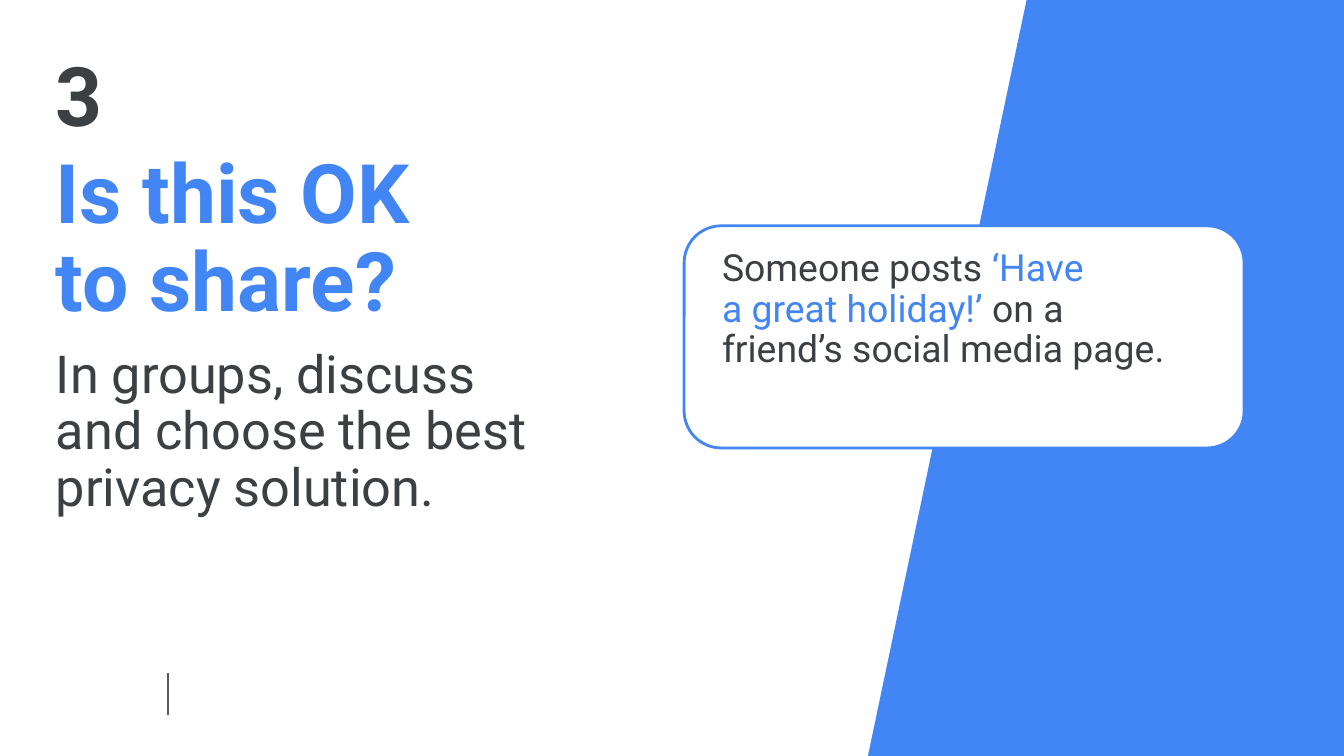
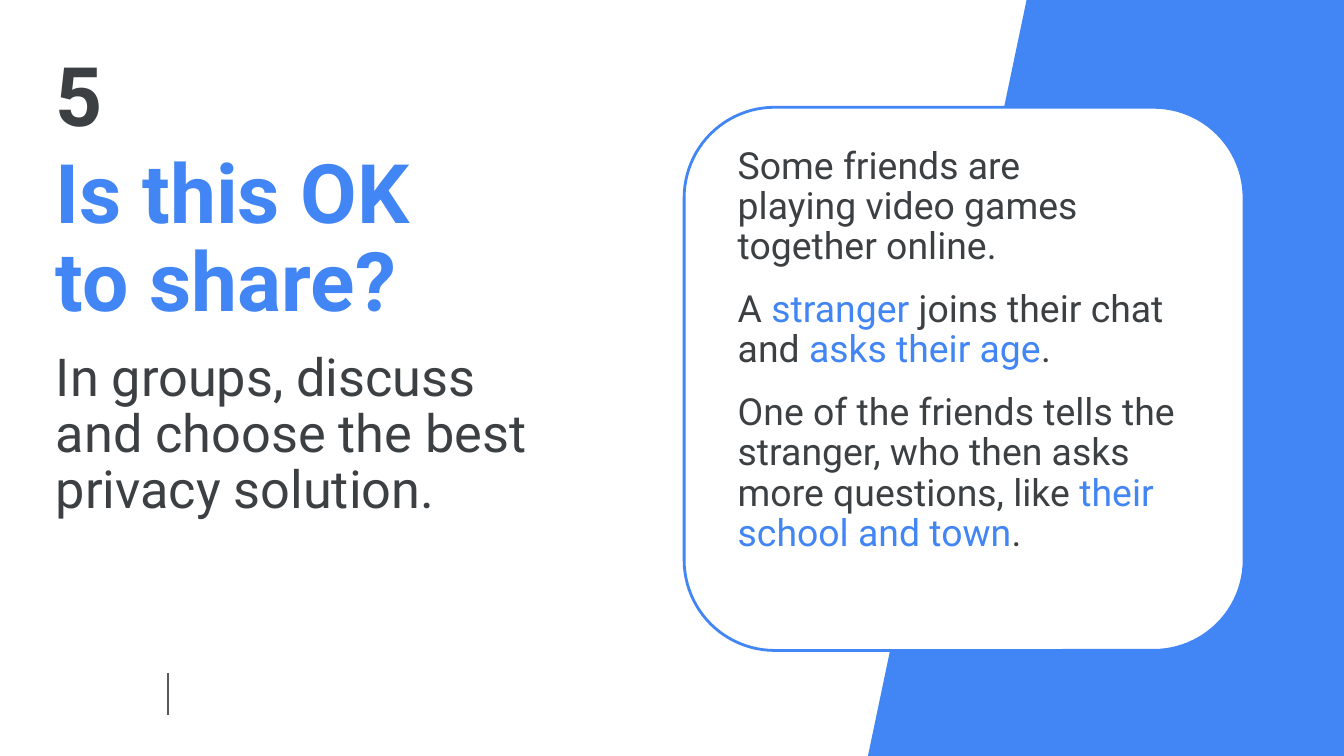
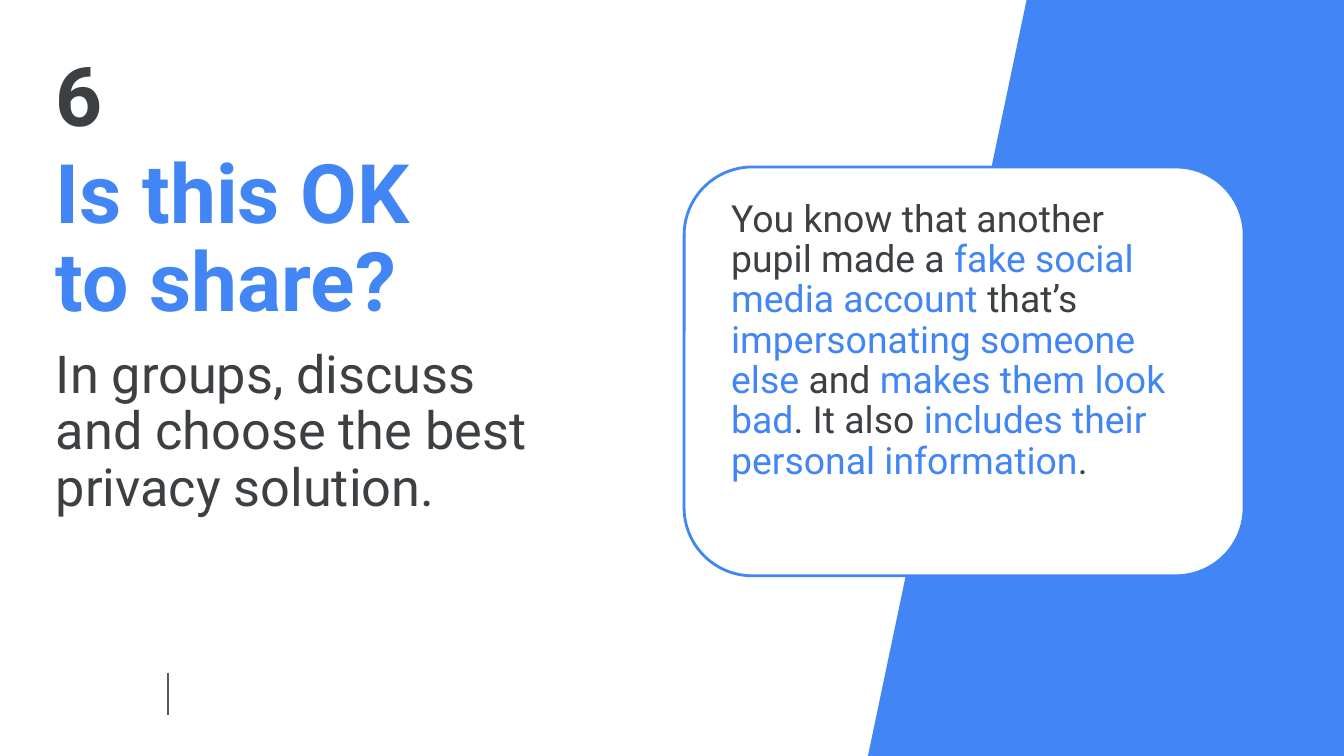
from typing import NamedTuple

from lxml import etree
from pptx import Presentation
from pptx.dml.color import RGBColor
from pptx.enum.shapes import MSO_CONNECTOR as CONNECTOR, MSO_SHAPE as SHAPE
from pptx.enum.text import MSO_ANCHOR as ANCHOR, MSO_AUTO_SIZE as AUTO_SIZE, PP_ALIGN as ALIGN
from pptx.oxml.ns import qn
from pptx.util import Pt

PX = 6350  # 144 px to the inch
SLIDE_W, SLIDE_H = 1440, 810

BLUE = RGBColor(0x42, 0x85, 0xF4)
INK = RGBColor(0x3C, 0x40, 0x43)
GREY = RGBColor(0x59, 0x59, 0x59)
WHITE = RGBColor(0xFF, 0xFF, 0xFF)

FONT = "Roboto"
HEADING = {"name": FONT, "size": Pt(44), "bold": True}
PROMPT = {"name": FONT, "size": Pt(28), "bold": False}
SCENARIO = {"name": FONT, "size": Pt(20), "bold": False}

NO_INSETS = (0, 0, 0, 0)
CARD_INSETS = (29, 14, 43, 14)


class Box(NamedTuple):
    left: int
    top: int
    width: int
    height: int

    def emu(self):
        return [length * PX for length in self]


NUMBER_BOX = Box(60, 59, 870, 108)
TITLE_BOX = Box(60, 163, 660, 192)
BAND_BOX = Box(930, 0, SLIDE_W - 930, SLIDE_H)
FOOTER_BOX = Box(180, 721, 0, 45)

TITLE = "Is this OK \nto share?"
INSTRUCTION = "In groups, discuss \nand choose the best privacy solution."

# number, prompt top, card top, card height, scenario (*...* marks blue words)
QUESTIONS = [
    ("3", 373, 242, 238, [
        "Someone posts *‘Have \na great holiday!’* on a \nfriend’s social media page.",
    ]),
    ("5", 376, 115, 582, [
        "Some friends are \nplaying video games together online.",
        "A *stranger* joins their chat and *asks their age*.",
        "One of the friends tells the stranger, who then asks more questions, "
        "like *their school and town*.",
    ]),
    ("6", 373, 179, 438, [
        "You know that another pupil made a *fake social media account* that’s "
        "*impersonating someone else* and *makes them look bad*. "
        "It also *includes their personal information*.",
    ]),
]


def set_all(target, values):
    for name, value in values.items():
        setattr(target, name, value)


def write_paragraph(paragraph, text, font, color):
    """Write text, with *...* in blue and each newline as a line break."""
    for part, phrase in enumerate(text.split("*")):
        for row, words in enumerate(phrase.split("\n")):
            if row:
                paragraph.add_line_break()
            if words:
                run = paragraph.add_run()
                run.text = words
                set_all(run.font, font)
                run.font.color.rgb = BLUE if part % 2 else color


def fill_text(frame, texts, font, color=INK, insets=NO_INSETS, auto_size=AUTO_SIZE.NONE):
    sides = ("margin_left", "margin_top", "margin_right", "margin_bottom")
    set_all(frame, {side: inset * PX for side, inset in zip(sides, insets)})
    set_all(frame, {"word_wrap": True, "auto_size": auto_size,
                    "vertical_anchor": ANCHOR.TOP})
    for index, text in enumerate(texts):
        paragraph = frame.add_paragraph() if index else frame.paragraphs[0]
        set_all(paragraph, {"alignment": ALIGN.LEFT, "line_spacing": 0.9})
        if index:
            paragraph.space_before = Pt(12)
        write_paragraph(paragraph, text, font, color)


def add_label(slide, box, text, font, **options):
    label = slide.shapes.add_textbox(*box.emu())
    fill_text(label.text_frame, [text], font, **options)


def add_footer_rule(slide, box):
    left, top, width, height = box.emu()
    rule = slide.shapes.add_connector(CONNECTOR.STRAIGHT, left, top, left + width, top + height)
    rule.line.color.rgb = GREY
    rule.line.width = Pt(0.75)
    etree.SubElement(rule._element.spPr, qn("a:effectLst"))


def add_slanted_band(slide, box, slant=170):
    right, bottom = box.left + box.width, box.top + box.height
    outline = slide.shapes.build_freeform(right, bottom, scale=PX)
    outline.add_line_segments([(box.left, bottom), (box.left + slant, box.top),
                               (right, box.top)], close=True)
    band = outline.convert_to_shape()
    band.shadow.inherit = False
    band.fill.solid()
    band.fill.fore_color.rgb = BLUE
    band.line.fill.background()


def add_scenario_card(slide, box, scenario):
    card = slide.shapes.add_shape(SHAPE.ROUNDED_RECTANGLE, *box.emu())
    card.shadow.inherit = False
    card.fill.solid()
    card.fill.fore_color.rgb = WHITE
    card.line.color.rgb = BLUE
    card.line.width = Pt(1.5)
    fill_text(card.text_frame, scenario, SCENARIO, insets=CARD_INSETS)


def add_question_slide(deck, number, prompt_top, card_top, card_height, scenario):
    slide = deck.slides.add_slide(deck.slide_layouts[6])
    add_footer_rule(slide, FOOTER_BOX)
    add_label(slide, NUMBER_BOX, number, HEADING)
    add_slanted_band(slide, BAND_BOX)
    add_scenario_card(slide, Box(733, card_top, 600, card_height), scenario)
    grow = AUTO_SIZE.SHAPE_TO_FIT_TEXT
    add_label(slide, TITLE_BOX, TITLE, HEADING, color=BLUE, auto_size=grow)
    add_label(slide, Box(60, prompt_top, 660, 183), INSTRUCTION, PROMPT, auto_size=grow)


def main():
    deck = Presentation()
    set_all(deck, {"slide_width": SLIDE_W * PX, "slide_height": SLIDE_H * PX})
    for question in QUESTIONS:
        add_question_slide(deck, *question)
    deck.save("out.pptx")


if __name__ == "__main__":
    main()
